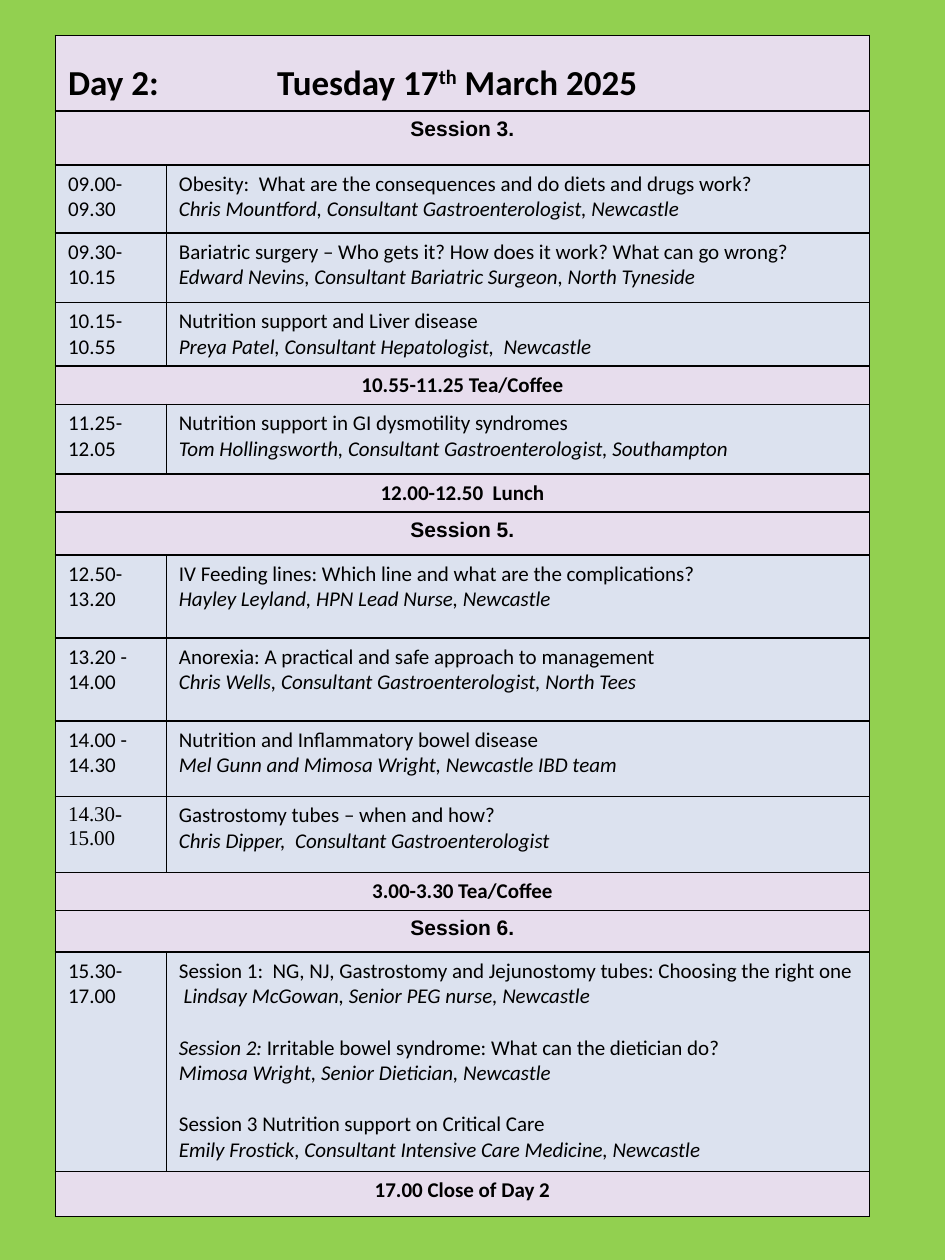
import pptx
import pptx.dml.color
import pptx.enum.text
import pptx.oxml
import pptx.oxml.ns
import pptx.util
from pptx.util import Inches

THEME = {
    "page": "92D050", "band": "E7DDED", "talk": "DCE2EF", "ink": "000000",
    "body": "Calibri", "session": "Arial", "serif": "Times New Roman",
    "title_size": 20, "size": 12, "border": 1,
}

# Content: (kind, row height, ...); a talk has time lines and (title, speaker) pairs
ROWS = [
    ("title", 0.6, ["Day 2:\tTuesday 17", "th", " March 2025"]),
    ("session", 0.43, "Session 3."),
    ("talk", 0.54, ["09.00-09.30"], [
        ("Obesity:  What are the consequences and do diets and drugs work?",
         "Chris Mountford, Consultant Gastroenterologist, Newcastle")]),
    ("talk", 0.55, ["09.30-10.15"], [
        ("Bariatric surgery – Who gets it? How does it work? What can go wrong?",
         "Edward Nevins, Consultant Bariatric Surgeon, North Tyneside")]),
    ("talk", 0.5, ["10.15-10.55"], [
        ("Nutrition support and Liver disease",
         "Preya Patel, Consultant Hepatologist,  Newcastle")]),
    ("break", 0.3, "10.55-11.25 Tea/Coffee"),
    ("talk", 0.55, ["11.25-12.05"], [
        ("Nutrition support in GI dysmotility syndromes",
         "Tom Hollingsworth, Consultant Gastroenterologist, Southampton")]),
    ("break", 0.3, "12.00-12.50  Lunch"),
    ("session", 0.34, "Session 5."),
    ("talk", 0.66, ["12.50-13.20"], [
        ("IV Feeding lines: Which line and what are the complications?",
         "Hayley Leyland, HPN Lead Nurse, Newcastle")]),
    ("talk", 0.66, ["13.20 - 14.00"], [
        ("Anorexia: A practical and safe approach to management",
         "Chris Wells, Consultant Gastroenterologist, North Tees")]),
    ("talk", 0.6, ["14.00 - 14.30"], [
        ("Nutrition and Inflammatory bowel disease",
         "Mel Gunn and Mimosa Wright, Newcastle IBD team")]),
    ("talk", 0.6, ["14.30-", "15.00"], [
        ("Gastrostomy tubes – when and how?",
         "Chris Dipper,  Consultant Gastroenterologist")]),
    ("break", 0.3, "3.00-3.30 Tea/Coffee"),
    ("session", 0.33, "Session 6."),
    ("talk", 1.74, ["15.30-17.00"], [
        ("Session 1:  NG, NJ, Gastrostomy and Jejunostomy tubes: Choosing the right one",
         " Lindsay McGowan, Senior PEG nurse, Newcastle"),
        (("Session 2: ", "Irritable bowel syndrome: What can the dietician do?"),
         "Mimosa Wright, Senior Dietician, Newcastle"),
        ("Session 3 Nutrition support on Critical Care",
         "Emily Frostick, Consultant Intensive Care Medicine, Newcastle")]),
    ("break", 0.36, "17.00 Close of Day 2"),
]
COLUMNS = [0.88, 5.58]
LEFT, TOP = 0.44, 0.28
TAB = 1.66        # where the date starts in the title row
TITLE_INSET = 0.21
TALK_GAP = 14.6   # one line between talks that share a cell


def rgb(name):
    return pptx.dml.color.RGBColor.from_string(THEME[name])


def style_cell(cell, fill):
    tcPr = cell._tc.get_or_add_tcPr()
    for side in ("lnL", "lnR", "lnT", "lnB"):
        tcPr.append(pptx.oxml.parse_xml(
            f'<a:{side} {pptx.oxml.ns.nsdecls("a")} w="{THEME["border"] * 12700}">'
            f'<a:solidFill><a:srgbClr val="{THEME["ink"]}"/></a:solidFill></a:{side}>'))
    cell.fill.solid()
    cell.fill.fore_color.rgb = rgb(fill)


def add_line(cell, text, font="body", size="size", bold=False, italic=False,
             center=False, tab=None):
    """Write text, or a sequence of run texts, as the cell's next paragraph."""
    tf = cell.text_frame
    p = tf.add_paragraph() if tf.paragraphs[0].runs else tf.paragraphs[0]
    if tab:
        p._p.get_or_add_pPr().append(pptx.oxml.parse_xml(
            f'<a:tabLst {pptx.oxml.ns.nsdecls("a")}>'
            f'<a:tab pos="{Inches(tab)}" algn="l"/></a:tabLst>'))
    if center:
        p.alignment = pptx.enum.text.PP_ALIGN.CENTER
    p.font.name, p.font.size = THEME[font], pptx.util.Pt(THEME[size])
    p.font.bold, p.font.color.rgb = bold, rgb("ink")
    if italic:
        p.font.italic = True
    for part in [text] if isinstance(text, str) else text:
        p.add_run().text = part
    return p


def fill_talk(time_cell, talk_cell, times, talks):
    for time in times:
        add_line(time_cell, time, font="serif" if len(times) > 1 else "body")
    for i, (title, speaker) in enumerate(talks):
        p = add_line(talk_cell, title)
        if i:
            p.space_before = pptx.util.Pt(TALK_GAP)
        if len(p.runs) > 1:
            p.runs[0].font.italic = True
        add_line(talk_cell, speaker, italic=True)


def main():
    prs = pptx.Presentation()
    prs.slide_width, prs.slide_height = Inches(7.5), Inches(10)
    s = prs.slides.add_slide(prs.slide_layouts[6])
    s.background.fill.solid()
    s.background.fill.fore_color.rgb = rgb("page")

    # Programme table
    table = s.shapes.add_table(
        len(ROWS), len(COLUMNS), Inches(LEFT), Inches(TOP),
        Inches(sum(COLUMNS)), Inches(sum(row[1] for row in ROWS))).table
    table.first_row = table.horz_banding = False
    for column, width in zip(table.columns, COLUMNS):
        column.width = Inches(width)

    for i, (kind, height, *content) in enumerate(ROWS):
        table.rows[i].height = Inches(height)
        first, last = table.cell(i, 0), table.cell(i, 1)
        for cell in (first, last):
            style_cell(cell, "talk" if kind == "talk" else "band")
        if kind == "talk":
            fill_talk(first, last, *content)
            continue

        # Full-width rows
        first.merge(last)
        if kind == "title":
            first.margin_top = Inches(TITLE_INSET)
            p = add_line(first, content[0], size="title_size", bold=True, tab=TAB)
            p.runs[1].font._element.set("baseline", "30000")
        else:
            add_line(first, content[0], font="session" if kind == "session" else "body",
                     bold=True, center=True)

    prs.save("out.pptx")


if __name__ == "__main__":
    main()
